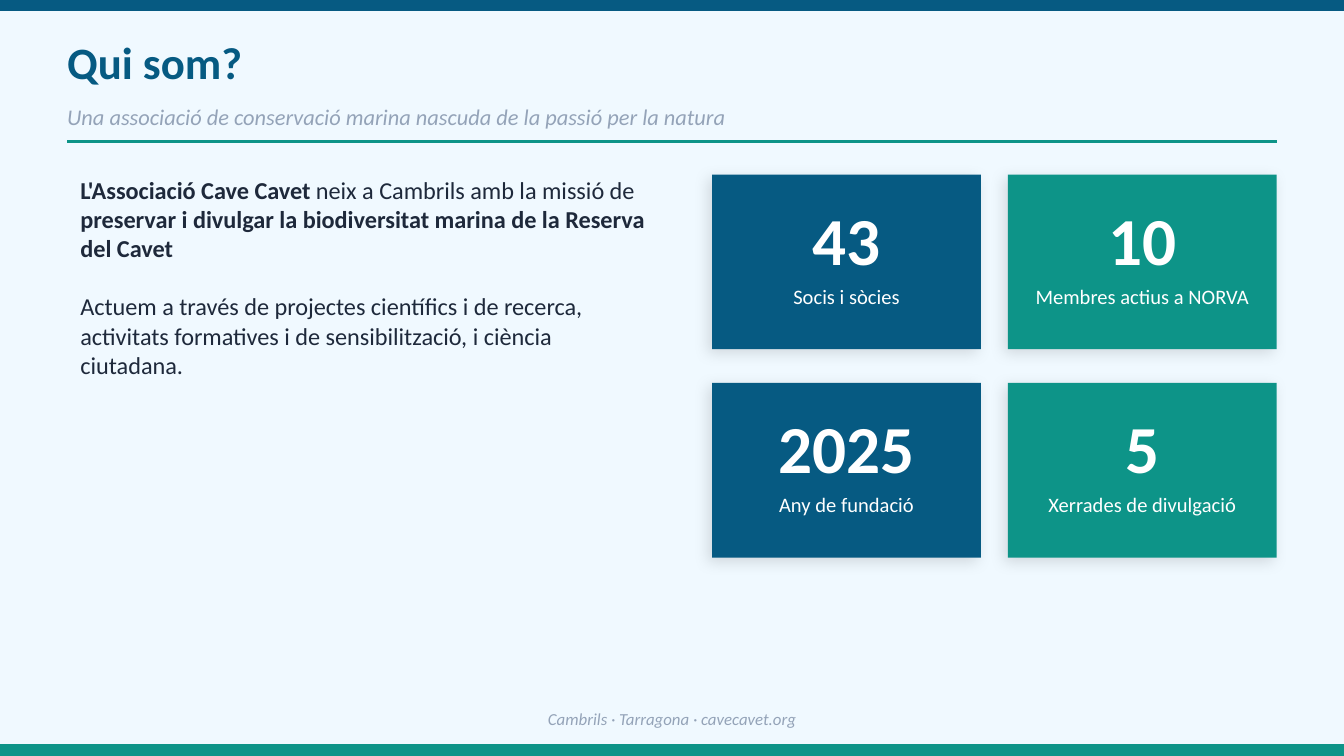
from lxml import etree
from pptx import Presentation
from pptx.dml.color import RGBColor
from pptx.enum.shapes import MSO_CONNECTOR, MSO_SHAPE
from pptx.enum.text import MSO_ANCHOR, PP_ALIGN
from pptx.oxml import parse_xml
from pptx.oxml.ns import nsdecls, qn
from pptx.util import Cm, Pt

RECT = MSO_SHAPE.RECTANGLE
LINE = MSO_CONNECTOR.STRAIGHT
TOP, MID = MSO_ANCHOR.TOP, MSO_ANCHOR.MIDDLE
LEFT, CENTER = PP_ALIGN.LEFT, PP_ALIGN.CENTER

BLUE = RGBColor(0x06, 0x5A, 0x82)
TEAL = RGBColor(0x0D, 0x94, 0x88)
PALE = RGBColor(0xF0, 0xF9, 0xFF)
GRAY = RGBColor(0x94, 0xA3, 0xB8)
INK = RGBColor(0x1E, 0x29, 0x3B)
WHITE = RGBColor(0xFF, 0xFF, 0xFF)

FONT = "Calibri"
WIDE, HIGH = 25.4, 14.29
EDGE = 1.27
BODY = WIDE - 2 * EDGE
BAR = 0.2

STORY = [
    [("L'Associació Cave Cavet", True),
     (" neix a Cambrils amb la missió de ", False),
     ("preservar i divulgar la biodiversitat marina de la Reserva del Cavet", True)],
    [("Actuem a través de projectes científics i de recerca, activitats formatives "
      "i de sensibilització, i ciència ciutadana.", False)],
]
STATS = [
    ("43", "Socis i sòcies"),
    ("10", "Membres actius a NORVA"),
    ("2025", "Any de fundació"),
    ("5", "Xerrades de divulgació"),
]
SHADOW = (
    f'<a:outerShdw {nsdecls("a")} blurRad="{Pt(8)}" dist="{Pt(3)}" dir="8100000" '
    'algn="bl" rotWithShape="0"><a:srgbClr val="000000"><a:alpha val="12000"/>'
    '</a:srgbClr></a:outerShdw>'
)


def add_text(slide, box, text, size, color, bold=False, italic=False,
             align=LEFT, anchor=MID, inset=(0, 0), gap=0):
    """Text is a string, or a list of paragraphs made of (words, bold) runs."""
    frame = slide.shapes.add_textbox(*map(Cm, box)).text_frame
    frame.word_wrap = True
    frame.vertical_anchor = anchor
    frame.margin_left = frame.margin_right = Cm(inset[0])
    frame.margin_top = frame.margin_bottom = Cm(inset[1])
    paras = [[(text, bold)]] if isinstance(text, str) else text
    for index, runs in enumerate(paras):
        para = frame.add_paragraph() if index else frame.paragraphs[0]
        para.alignment = align
        if index:
            para.space_before = Pt(gap)
        for words, heavy in runs:
            run = para.add_run()
            run.text = words
            font = run.font
            font.name, font.size = FONT, Pt(size)
            font.bold, font.italic = heavy, italic
            font.color.rgb = color


def add_rect(slide, box, color):
    rect = slide.shapes.add_shape(RECT, *map(Cm, box))
    rect.fill.solid()
    rect.fill.fore_color.rgb = color
    rect.line.fill.background()
    rect.shadow.inherit = False
    return rect


def add_bar(slide, box, color):
    line = add_rect(slide, box, color).line
    line.color.rgb = color
    line.width = Pt(1)


def add_head(slide, left, top, width):
    add_text(slide, (left, top, width, 1.4), "Qui som?", 24, BLUE, bold=True)
    add_text(slide, (left, top + 1.37, width, 0.76),
             "Una associació de conservació marina nascuda de la passió per la natura",
             12, GRAY, italic=True)
    level = Cm(top + 2.21)
    rule = slide.shapes.add_connector(LINE, Cm(left), level, Cm(left + width), level)
    rule.line.color.rgb = TEAL
    rule.line.width = Pt(1.5)
    etree.SubElement(rule.element.spPr, qn("a:effectLst"))


def add_card(slide, left, top, width, height, color, value, label):
    card = add_rect(slide, (left, top, width, height), color)
    card.element.spPr.find(qn("a:effectLst")).append(parse_xml(SHADOW))
    add_text(slide, (left, top + 0.3, width, 1.82), value, 36, WHITE,
             bold=True, align=CENTER)
    add_text(slide, (left, top + 2.06, width, height - 2.06), label, 11, WHITE,
             align=CENTER, anchor=TOP)


def add_stats(slide, left, top, width, height):
    wide, high = 5.08, 3.3
    for index, (value, label) in enumerate(STATS):
        row, col = divmod(index, 2)
        add_card(slide, left + col * (width - wide), top + row * (height - high),
                 wide, high, (BLUE, TEAL)[col], value, label)


def main():
    deck = Presentation()
    deck.slide_width, deck.slide_height = Cm(WIDE), Cm(HIGH)
    slide = deck.slides.add_slide(deck.slide_layouts[6])
    slide.background.fill.solid()
    slide.background.fill.fore_color.rgb = PALE

    add_bar(slide, (0, 0, WIDE, BAR), BLUE)
    add_bar(slide, (0, HIGH - BAR, WIDE, BAR), TEAL)
    add_head(slide, EDGE, 0.46, BODY)
    add_text(slide, (EDGE, 3.18, 11.43, 4.57), STORY, 13, INK,
             anchor=TOP, inset=(0.25, 0.13), gap=15.6)
    add_stats(slide, 13.46, 3.3, 10.67, 7.24)
    add_text(slide, (EDGE, 13.21, BODY, 0.76), "Cambrils · Tarragona · cavecavet.org",
             9, GRAY, italic=True, align=CENTER)
    deck.save("out.pptx")


if __name__ == "__main__":
    main()
